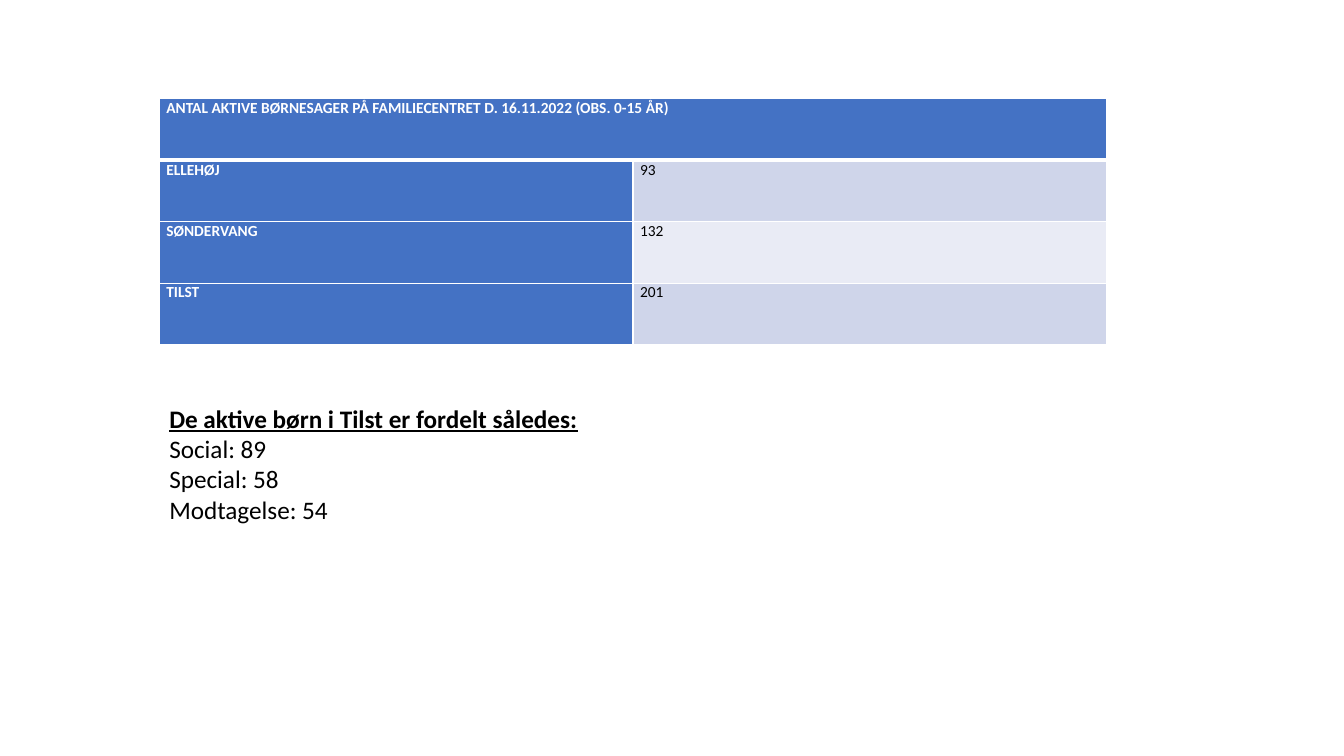
"""Build the slide on active child cases at the family centre."""
from lxml.etree import SubElement as Sub
from pptx import Presentation
from pptx.dml.color import RGBColor
from pptx.oxml.ns import qn
from pptx.util import Pt

HEAD = "ANTAL AKTIVE BØRNESAGER PÅ FAMILIECENTRET D. 16.11.2022 (OBS. 0-15 ÅR)"
CASES = [("ELLEHØJ", "93"), ("SØNDERVANG", "132"), ("TILST", "201")]
SPLIT = [
    "De aktive børn i Tilst er fordelt således:",
    "Social: 89",
    "Special: 58",
    "Modtagelse: 54",
]
BLUE, WHITE, BLACK = "4472C4", "FFFFFF", "000000"
BANDS = ["CFD5EA", "E9EBF5"]
LEFT, TOP, COL, ROW = 113.8, 70.6, 338.4, 43.9


def paint(fill, tone):
    fill.solid()
    fill.fore_color.rgb = RGBColor.from_string(tone)


def style(para, size, tone, bold):
    for run in para.runs:
        font = run.font
        font.name, font.size, font.bold = "Calibri", Pt(size), bold
        paint(font.fill, tone)


def edge(cell, base):
    props = cell._tc.get_or_add_tcPr()
    for side, width in (("L", 1), ("R", 1), ("T", 1), ("B", base)):
        line = Sub(props, qn("a:ln" + side), w=str(Pt(width)))
        Sub(Sub(line, qn("a:solidFill")), qn("a:srgbClr"), val=WHITE)


def add_cases(slide):
    rows = [(HEAD, "")] + CASES
    frame = slide.shapes.add_table(
        len(rows), 2, Pt(LEFT), Pt(TOP), Pt(2 * COL), Pt(len(rows) * ROW))
    table = frame.table
    table.first_col = True
    table.cell(0, 0).merge(table.cell(0, 1))
    for r, row in enumerate(rows):
        table.rows[r].height = Pt(ROW)
        for c, text in enumerate(row):
            cell = table.cell(r, c)
            label = r == 0 or c == 0
            edge(cell, 3 if r == 0 else 1)
            paint(cell.fill, BLUE if label else BANDS[(r - 1) % 2])
            cell.margin_left = cell.margin_right = Pt(5)
            cell.margin_top = cell.margin_bottom = 0
            para = cell.text_frame.paragraphs[0]
            para.text = text
            style(para, 11, WHITE if label else BLACK, label)


def add_split(slide):
    box = slide.shapes.add_textbox(Pt(LEFT), Pt(284.4), Pt(480), Pt(94.3))
    frame = box.text_frame
    frame.word_wrap = True
    frame.text = "\n".join(SPLIT)
    for i, para in enumerate(frame.paragraphs):
        style(para, 18, BLACK, i == 0)
    frame.paragraphs[0].runs[0].font.underline = True


def main():
    deck = Presentation()
    deck.slide_width, deck.slide_height = Pt(960), Pt(540)
    slide = deck.slides.add_slide(deck.slide_layouts[6])
    add_cases(slide)
    add_split(slide)
    deck.save("out.pptx")


if __name__ == "__main__":
    main()
